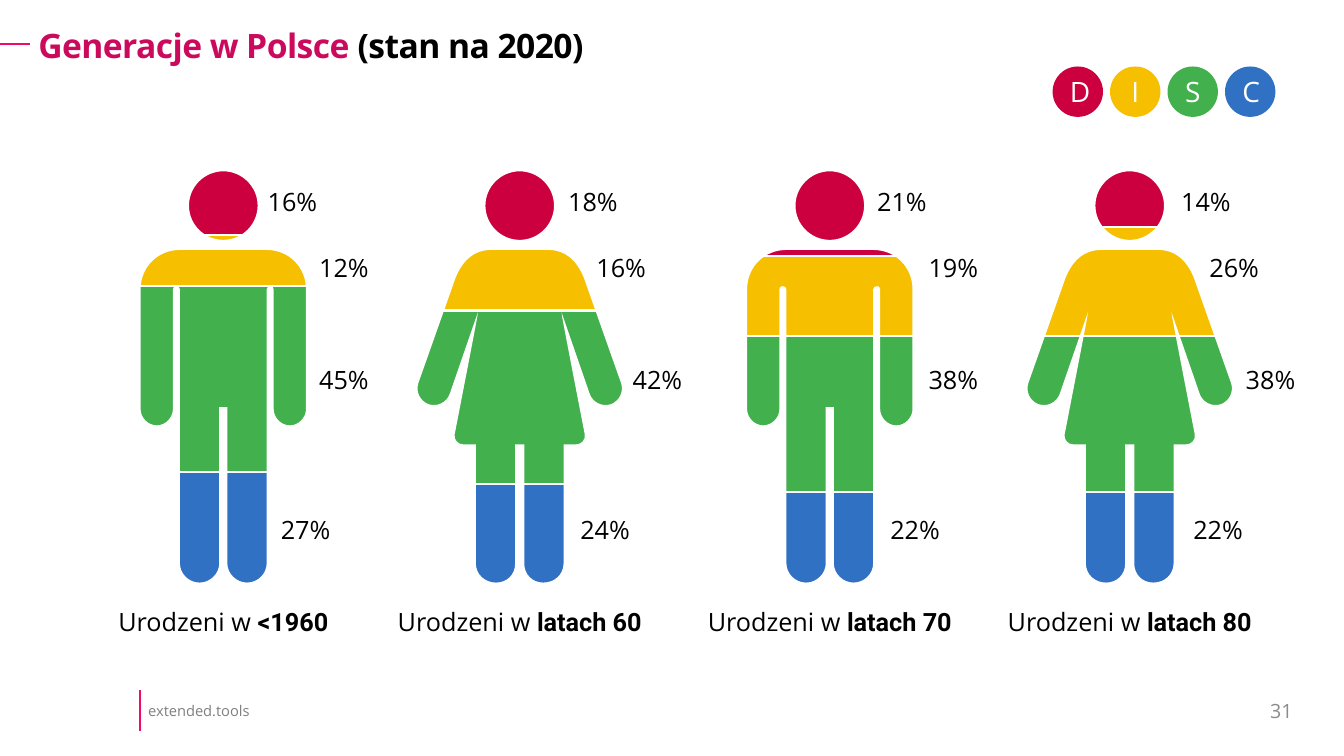
"""Build a slide of four generations as figures filled by DISC shares."""
import itertools

import pptx
import pptx.dml.color
import pptx.enum.shapes
import pptx.enum.text
import pptx.util
from lxml import etree
from pptx.oxml.ns import qn

CELL = pptx.util.Inches(0.1)
COLUMNS, ROWS = 133.3, 75
SANS, BOLD = "Open Sans", "Roboto"
BLACK, WHITE, PINK, GREY = "000000", "FFFFFF", "ED0C6D", "808080"
DISC = {"D": "CC003E", "I": "F6BF00", "S": "42B04D", "C": "3171C3"}
BAND_TOP, BAND_BOTTOM = 16.7, 58.2
MASK_TOP, MASK_BOTTOM = 16.2, 58.6
LABEL_ROWS = (18.5, 25, 36.1, 51)
LEFT, CENTER, RIGHT = (pptx.enum.text.PP_ALIGN.LEFT, pptx.enum.text.PP_ALIGN.CENTER,
                       pptx.enum.text.PP_ALIGN.RIGHT)
TOP, MIDDLE = pptx.enum.text.MSO_ANCHOR.TOP, pptx.enum.text.MSO_ANCHOR.MIDDLE

HEAD = [[(0, 17)], [(1.87, 17), (3.4, 18.53), (3.4, 20.4)],
        [(3.4, 22.27), (1.87, 23.8), (0, 23.8)]]
MAN = {
    "half": 8.6,
    "labels": (4.4, 9.5, 9.5, 5.7),
    "outline": [
        [(4.3, 24.8)], [(6.5, 24.8), (8.2, 26.5), (8.2, 28.7)],
        [(8.2, 40.6)], [(8.2, 41.4), (7.5, 42.2), (6.6, 42.2)],
        [(5.7, 42.2), (5, 41.4), (5, 40.6)],
        [(5, 28.7)], [(5, 28.5), (4.8, 28.3), (4.65, 28.4)],
        [(4.5, 28.4), (4.3, 28.5), (4.3, 28.7)],
        [(4.3, 55.9)], [(4.3, 56.9), (3.45, 57.8), (2.35, 57.8)],
        [(1.3, 57.8), (0.4, 56.9), (0.4, 55.9)], [(0.4, 40.4)],
    ],
}
WOMAN = {
    "half": 10.55,
    "labels": (4.8, 7.6, 11.2, 6),
    "outline": [
        [(2.85, 24.8)], [(4.55, 24.8), (5.85, 25.9), (6.55, 28.1)],
        [(10.05, 38)], [(10.35, 38.9), (9.85, 39.8), (9.05, 40.1)],
        [(8.15, 40.4), (7.25, 39.9), (6.95, 39.1)],
        [(4.15, 31)], [(4.25, 31.7), (3.95, 30.2), (6.45, 43.1)],
        [(6.55, 43.6), (6.15, 44.1), (5.55, 44.1)],
        [(4.35, 44.1)], [(4.35, 55.9)], [(4.35, 57), (3.45, 57.8), (2.35, 57.8)],
        [(1.25, 57.8), (0.45, 57), (0.45, 55.9)], [(0.45, 44.1)],
    ],
}
GENERATIONS = [
    (MAN, 22.15, 0, "<1960", (16, 12, 45, 27), (23.3, 28.4, 46.8)),
    (WOMAN, 51.55, 0, "latach 60", (18, 16, 42, 24), (24.3, 30.8, 48)),
    (MAN, 82.3, 0.3, "latach 70", (21, 19, 38, 22), (25.4, 33.3, 48.8)),
    (WOMAN, 112.05, 0.3, "latach 80", (14, 26, 38, 22), (22.5, 33.3, 48.8)),
]


def grid(*cells):
    """Turn grid positions into whole EMU lengths."""
    return [round(c * CELL) for c in cells]


def color(value):
    """Return the colour for a hex string."""
    return pptx.dml.color.RGBColor.from_string(value)


def add_runs(p, runs):
    """Add runs given as text, size, font, colour, bold and spacing."""
    for text, size, font, fill, bold, spacing in runs:
        r = p.add_run()
        r.text = text
        r.font.size, r.font.name, r.font.bold = pptx.util.Pt(size), font, bold
        r.font.color.rgb = color(fill)
        if spacing:
            r._r.get_or_add_rPr().set("spc", str(spacing))


def add_text(shapes, box, runs, align=LEFT, anchor=TOP, inset=(0, 0)):
    """Add a wrapping text box of one paragraph."""
    tf = shapes.add_textbox(*grid(*box)).text_frame
    tf.word_wrap = True
    tf.vertical_anchor = anchor
    tf.margin_left = tf.margin_right = grid(inset[0])[0]
    tf.margin_top = tf.margin_bottom = grid(inset[1])[0]
    p = tf.paragraphs[0]
    p.alignment = align
    add_runs(p, runs)
    return p


def add_fill(sp, fill, line=None):
    """Give a shape a flat fill and an optional outline."""
    sp.shadow.inherit = False
    sp.fill.solid()
    sp.fill.fore_color.rgb = color(fill)
    if line:
        sp.line.color.rgb = color(line)
        sp.line.width = pptx.util.Pt(1.5)
    else:
        sp.line.fill.background()


def add_rule(shapes, *ends):
    """Draw a thin pink line."""
    line = shapes.add_connector(pptx.enum.shapes.MSO_CONNECTOR.STRAIGHT, *grid(*ends))
    line.line.color.rgb = color(PINK)
    line.line.width = pptx.util.Pt(1.5)
    etree.SubElement(line._element.spPr, qn("a:effectLst"))


def mirror(side):
    """Return all points of a symmetric contour and its segment sizes."""
    points = [point for segment in side for point in segment]
    sizes = [len(segment) for segment in side[1:]]
    return points + [(-x, y) for x, y in reversed(points)], sizes + [1] + sizes[::-1]


def bend(sp, sizes):
    """Merge each run of three straight steps into one Bezier curve."""
    steps = iter(list(sp._element.iter(qn("a:lnTo"))))
    for size in sizes:
        first, *rest = itertools.islice(steps, size)
        if rest:
            first.addprevious(curve := etree.Element(qn("a:cubicBezTo")))
            for step in (first, *rest):
                curve.append(step[0])
                step.getparent().remove(step)


def add_mask(shapes, figure, center):
    """Cover the bands in white, leaving a body and a head open."""
    half = figure["half"] + 0.45
    frame = [[(half, MASK_TOP)], [(half, MASK_BOTTOM)]]
    builder, sizes = None, []
    for side in (frame, figure["outline"], HEAD):
        contour, contour_sizes = mirror(side)
        points = [grid(center + x, y) for x, y in contour]
        if builder:
            builder.move_to(*points[0])
        else:
            builder = shapes.build_freeform(*points[0])
        builder.add_line_segments(points[1:], close=True)
        sizes += contour_sizes
    sp = builder.convert_to_shape()
    bend(sp, sizes)
    add_fill(sp, WHITE)


def add_generation(shapes, figure, center, nudge, years, shares, cuts):
    """Add one banded figure with its percentages and caption."""
    half = figure["half"]
    edges = (BAND_TOP, *cuts, BAND_BOTTOM)
    for fill, (top, bottom) in zip(DISC.values(), itertools.pairwise(edges)):
        band = shapes.add_shape(pptx.enum.shapes.MSO_SHAPE.RECTANGLE,
                                *grid(center - half, top, 2 * half, bottom - top))
        add_fill(band, fill, WHITE)
    add_mask(shapes, figure, center)
    add_text(shapes, (center - 15, 60.2, 30, 3),
             [("Urodzeni w ", 18, SANS, BLACK, False, 0), (years, 18, BOLD, BLACK, True, 0)],
             CENTER)
    for share, offset, row in zip(shares, figure["labels"], LABEL_ROWS):
        add_text(shapes, (center + offset + nudge, row, 5.2, 3),
                 [(f"{share}%", 18, SANS, BLACK, False, 0)])


def add_badge(shapes, index, letter, fill):
    """Add one round letter of the DISC key."""
    sp = shapes.add_shape(pptx.enum.shapes.MSO_SHAPE.OVAL,
                          *grid(104.4 + 5.7 * index, 6.6, 5, 5))
    add_fill(sp, fill)
    tf = sp.text_frame
    tf.vertical_anchor = MIDDLE
    tf.paragraphs[0].alignment = CENTER
    add_runs(tf.paragraphs[0], [(letter, 20, SANS, WHITE, False, 0)])


def main():
    """Build and save the slide."""
    prs = pptx.Presentation()
    prs.slide_width, prs.slide_height = grid(COLUMNS, ROWS)
    s = prs.slides.add_slide(prs.slide_layouts[6])
    add_text(s.shapes, (13.4, 68.9, 17.2, 3.2),
             [("extended.tools", 10.5, SANS, GREY, False, 0)], anchor=MIDDLE, inset=(1.3, 0.7))
    add_rule(s.shapes, 13.9, 68.5, 13.9, 72.5)
    add_rule(s.shapes, 3, 4.4, 0, 4.4)
    title = add_text(s.shapes, (3, 2.5, 126.3, 4.5),
                     [("Generacje w Polsce ", 24, SANS, "CC0A5D", True, -40),
                      ("(stan na 2020)", 24, SANS, BLACK, True, -40)], inset=(0.8, 0.4))
    title.line_spacing = 0.9
    add_text(s.shapes, (116.6, 68.5, 12.6, 4), [("31", 14, SANS, "8C8C8C", False, 0)],
             RIGHT, MIDDLE, (1, 0.5))
    for generation in GENERATIONS:
        add_generation(s.shapes, *generation)
    for index, (letter, fill) in enumerate(DISC.items()):
        add_badge(s.shapes, index, letter, fill)
    prs.save("out.pptx")


if __name__ == "__main__":
    main()
